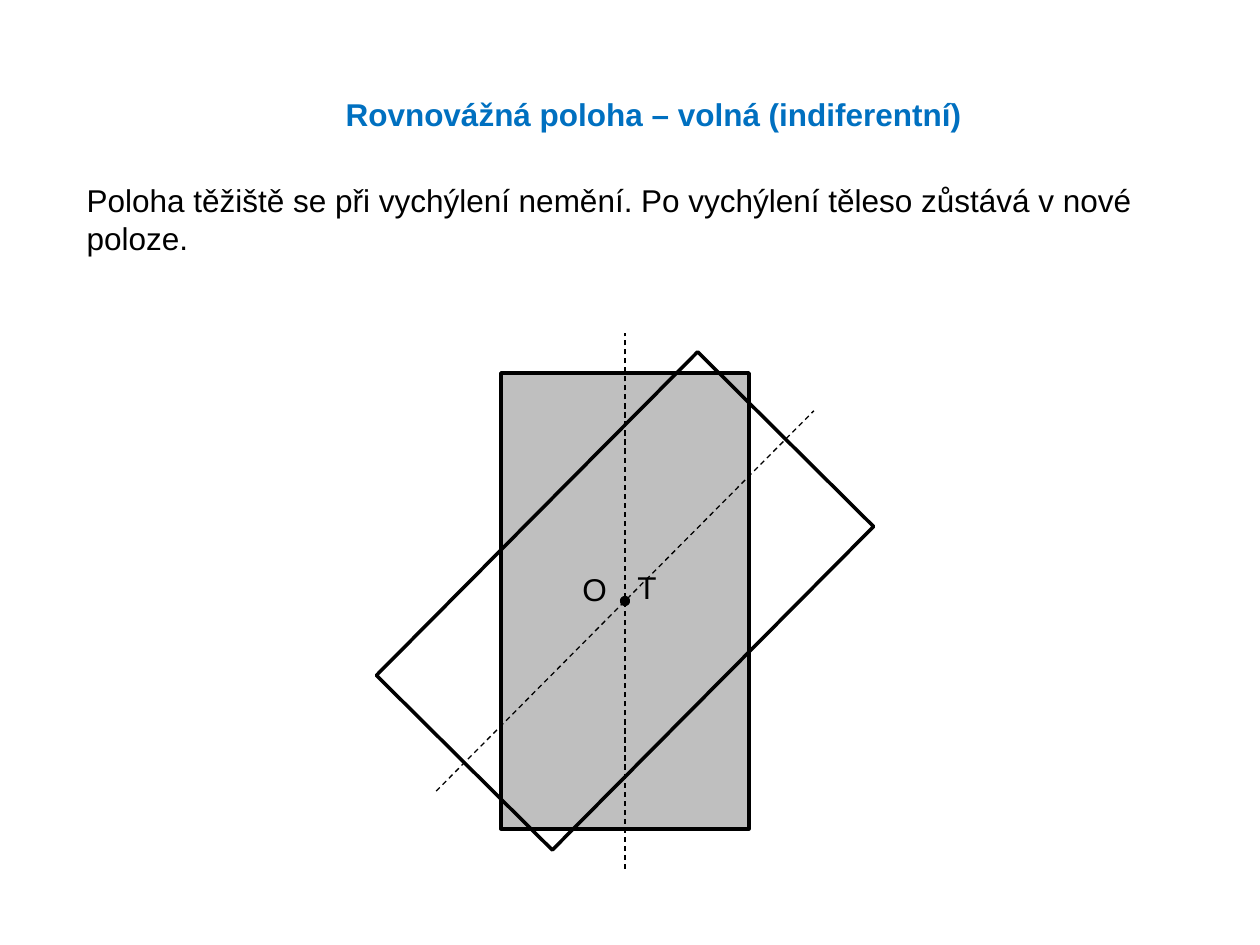
import math
import pptx
import pptx.dml.color
import pptx.enum.dml
import pptx.enum.shapes
import pptx.enum.text
import pptx.oxml.ns
import pptx.util
from lxml import etree

PIXEL = 914400 / 126
BLUE = pptx.dml.color.RGBColor(0x00, 0x70, 0xC0)
BLACK = pptx.dml.color.RGBColor(0x00, 0x00, 0x00)
GREY = pptx.dml.color.RGBColor(0xBF, 0xBF, 0xBF)


def px(*lengths):
    return [pptx.util.Emu(round(length * PIXEL)) for length in lengths]


def write(shape, text, color, bold=False, wrap=True):
    frame = shape.text_frame
    frame.word_wrap = wrap
    frame.auto_size = pptx.enum.text.MSO_AUTO_SIZE.NONE
    frame.vertical_anchor = pptx.enum.text.MSO_ANCHOR.TOP
    paragraph = frame.paragraphs[0]
    paragraph.alignment = pptx.enum.text.PP_ALIGN.LEFT
    paragraph.space_before = pptx.util.Pt(0)
    run = paragraph.add_run()
    run.text = text
    run.font.name = "Arial"
    run.font.size = pptx.util.Pt(18)
    run.font.bold = bold
    run.font.color.rgb = color


presentation = pptx.Presentation()
presentation.slide_width, presentation.slide_height = px(1260, 945)
slide = presentation.slides.add_slide(presentation.slide_layouts[1])

# Title
title = slide.shapes.title
title.left, title.top, title.width, title.height = px(333, 89, 804, 50)
write(title, "Rovnovážná poloha – volná (indiferentní)", BLUE, bold=True)

# Explanation, without a bullet
body = slide.placeholders[1]
body.left, body.top, body.width, body.height = px(74, 175, 1091, 89)
properties = body.text_frame.paragraphs[0]._p.get_or_add_pPr()
properties.set("marL", "0")
properties.set("indent", "0")
etree.SubElement(properties, pptx.oxml.ns.qn("a:buNone"))
write(body, "Poloha těžiště se při vychýlení nemění. Po vychýlení těleso zůstává v nové poloze.", BLACK)

# Body upright and tilted about its centre of gravity
CENTER_X, CENTER_Y = 625, 601
WIDTH, HEIGHT = 248, 456
HALF_AXIS = 268
DOT = 10

for angle in (0, 44.8):
    block = slide.shapes.add_shape(
        pptx.enum.shapes.MSO_SHAPE.RECTANGLE,
        *px(CENTER_X - WIDTH / 2, CENTER_Y - HEIGHT / 2, WIDTH, HEIGHT))
    block.rotation = angle
    block.shadow.inherit = False
    block.line.color.rgb = BLACK
    block.line.width = pptx.util.Pt(2)
    if angle:
        block.fill.background()
    else:
        block.fill.solid()
        block.fill.fore_color.rgb = GREY

    # Dashed axis through the centre
    dx = HALF_AXIS * math.sin(math.radians(angle))
    dy = HALF_AXIS * math.cos(math.radians(angle))
    axis = slide.shapes.add_connector(
        pptx.enum.shapes.MSO_CONNECTOR.STRAIGHT,
        *px(CENTER_X - dx, CENTER_Y + dy, CENTER_X + dx, CENTER_Y - dy))
    axis.line.color.rgb = BLACK
    axis.line.width = pptx.util.Pt(0.75)
    axis.line.dash_style = pptx.enum.dml.MSO_LINE.DASH
    etree.SubElement(axis._element.spPr, pptx.oxml.ns.qn("a:effectLst"))

    # Centre of gravity
    dot = slide.shapes.add_shape(
        pptx.enum.shapes.MSO_SHAPE.OVAL,
        *px(CENTER_X - DOT / 2, CENTER_Y - DOT / 2, DOT, DOT))
    dot.rotation = angle
    dot.shadow.inherit = False
    dot.fill.solid()
    dot.fill.fore_color.rgb = BLACK
    dot.line.fill.background()

# Labels of the pivot and the centre of gravity
for letter, left, top, width in (("O", 570, 564, 50), ("T", 625, 562, 45)):
    label = slide.shapes.add_textbox(*px(left, top, width, 50))
    write(label, letter, BLACK, wrap=False)

presentation.save("out.pptx")
